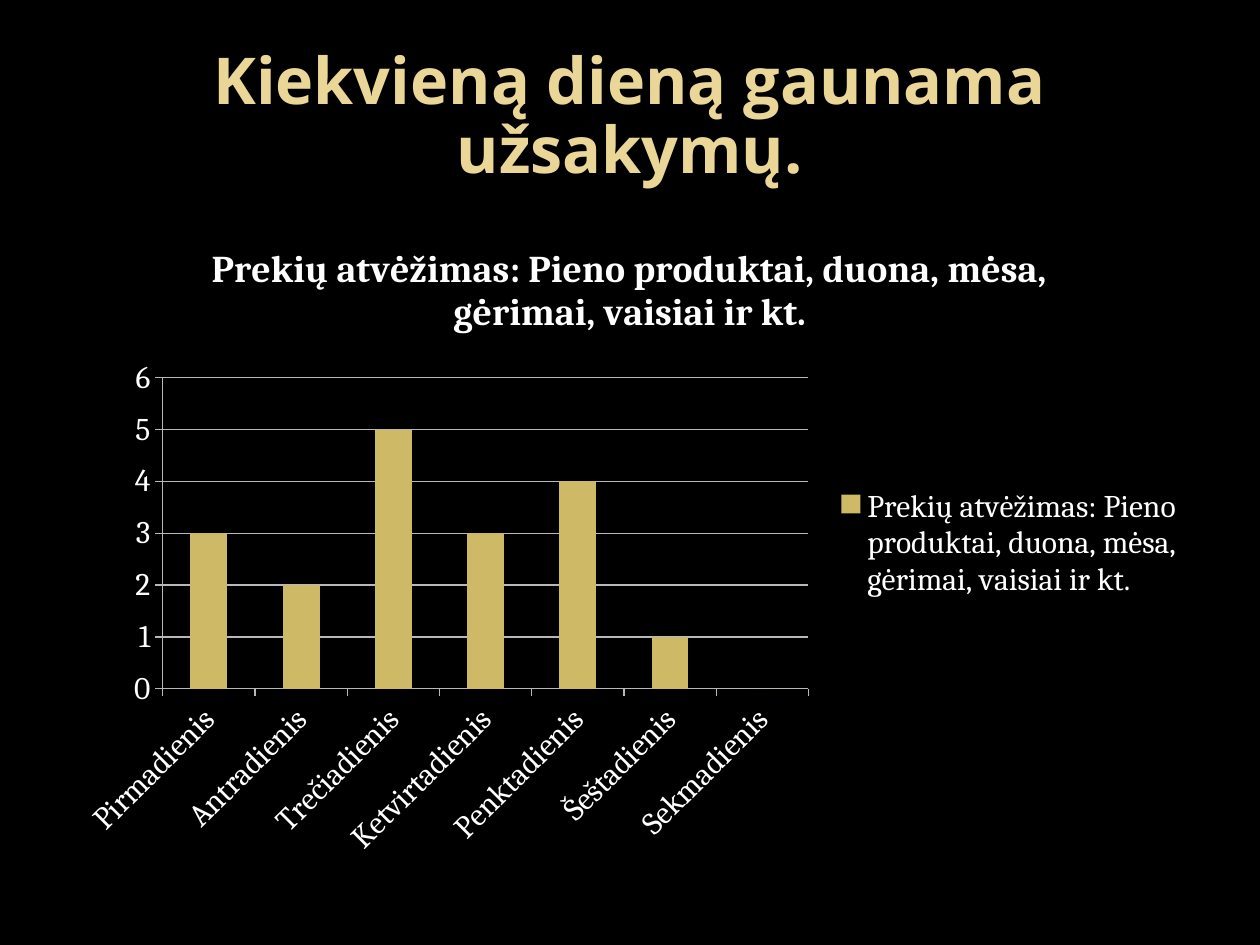
import pptx
import pptx.chart.data
import pptx.dml.color
import pptx.enum.chart
import pptx.enum.text
import pptx.util

RGBColor = pptx.dml.color.RGBColor
BLACK = RGBColor(0x00, 0x00, 0x00)
WHITE = RGBColor(0xFF, 0xFF, 0xFF)
PALE_GOLD = RGBColor(0xEA, 0xD6, 0x96)
GOLD = RGBColor(0xCE, 0xB9, 0x66)
GREY = RGBColor(0xB8, 0xB8, 0xB8)

WIDTH = pptx.util.Inches(10)
HEIGHT = pptx.util.Inches(7.5)
MARGIN = 0.05

HEADING = "Kiekvieną dieną gaunama užsakymų."
DELIVERIES = "Prekių atvėžimas: Pieno produktai, duona, mėsa, gėrimai, vaisiai ir kt."
ORDERS_BY_DAY = {
    "Pirmadienis": 3,
    "Antradienis": 2,
    "Trečiadienis": 5,
    "Ketvirtadienis": 3,
    "Penktadienis": 4,
    "Šeštadienis": 1,
    "Sekmadienis": 0,
}

HEADING_FONT = {"name": "Open Sans", "size": pptx.util.Pt(36.9), "bold": True}
CHART_FONT = {"name": "Cambria", "size": pptx.util.Pt(18), "bold": False}
CHART_TITLE_FONT = {"name": "Cambria", "size": pptx.util.Pt(21.6), "bold": True}


def apply_format(target, values):
    for name, value in values.items():
        setattr(target, name, value)


def style_font(font, values, color):
    apply_format(font, values)
    font.color.rgb = color


def full_width_box(top, height):
    """Return left, top, width and height from shares of the slide's height."""
    return (int(WIDTH * MARGIN), int(HEIGHT * top),
            int(WIDTH * (1 - 2 * MARGIN)), int(HEIGHT * height))


def add_heading(slide, text, box):
    frame = slide.shapes.add_textbox(*box).text_frame
    apply_format(frame, {
        "word_wrap": True,
        "vertical_anchor": pptx.enum.text.MSO_ANCHOR.MIDDLE,
    })
    paragraph = frame.paragraphs[0]
    apply_format(paragraph, {
        "alignment": pptx.enum.text.PP_ALIGN.CENTER,
        "line_spacing": 0.9,
    })
    run = paragraph.add_run()
    run.text = text
    style_font(run.font, HEADING_FONT, PALE_GOLD)


def style_axis(axis, values):
    apply_format(axis, values)
    axis.major_tick_mark = pptx.enum.chart.XL_TICK_MARK.OUTSIDE
    axis.format.line.color.rgb = GREY
    axis.format.line.width = pptx.util.Pt(0.75)


def add_column_chart(slide, name, values_by_category, box):
    data = pptx.chart.data.CategoryChartData()
    data.categories = list(values_by_category)
    data.add_series(name, list(values_by_category.values()))
    chart = slide.shapes.add_chart(
        pptx.enum.chart.XL_CHART_TYPE.COLUMN_CLUSTERED, *box, data).chart
    style_font(chart.font, CHART_FONT, WHITE)

    chart.has_title = True
    run = chart.chart_title.text_frame.paragraphs[0].add_run()
    run.text = name
    style_font(run.font, CHART_TITLE_FONT, WHITE)
    chart.chart_title.include_in_layout = False

    chart.has_legend = True
    apply_format(chart.legend, {
        "position": pptx.enum.chart.XL_LEGEND_POSITION.RIGHT,
        "include_in_layout": False,
    })

    style_axis(chart.category_axis, {"has_major_gridlines": False})
    style_axis(chart.value_axis, {
        "has_major_gridlines": True,
        "minimum_scale": 0,
        "maximum_scale": 6,
        "major_unit": 1,
    })
    gridline = chart.value_axis.major_gridlines.format.line
    gridline.color.rgb = GREY
    gridline.width = pptx.util.Pt(0.75)

    plot = chart.plots[0]
    apply_format(plot, {"gap_width": 150, "vary_by_categories": False})
    fill = plot.series[0].format.fill
    fill.solid()
    fill.fore_color.rgb = GOLD


def main():
    presentation = pptx.Presentation()
    apply_format(presentation, {"slide_width": WIDTH, "slide_height": HEIGHT})
    slide = presentation.slides.add_slide(presentation.slide_layouts[6])
    slide.background.fill.solid()
    slide.background.fill.fore_color.rgb = BLACK

    add_heading(slide, HEADING, full_width_box(0.04, 0.17))
    add_column_chart(slide, DELIVERIES, ORDERS_BY_DAY, full_width_box(0.23, 0.69))
    presentation.save("out.pptx")


if __name__ == "__main__":
    main()
